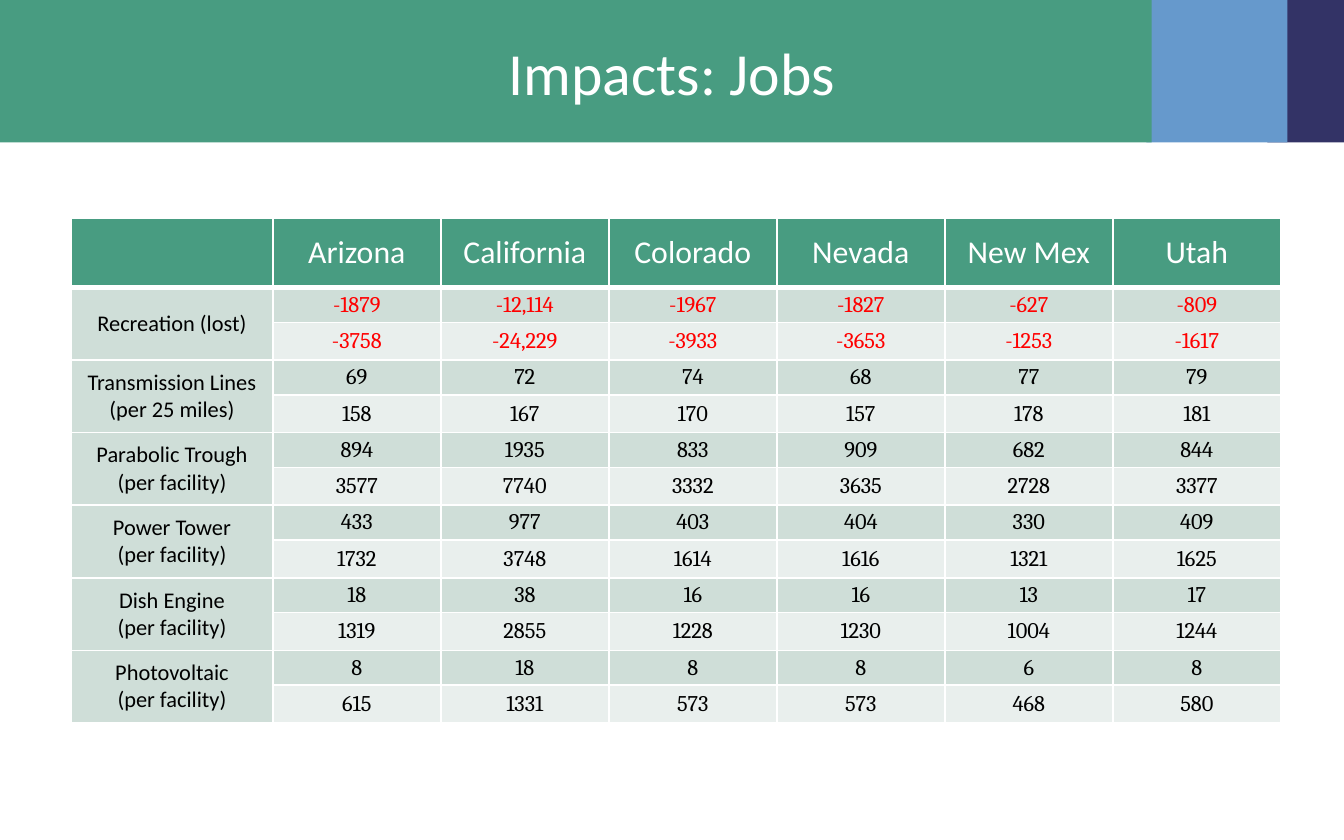
from dataclasses import dataclass

import lxml.etree
import pptx
import pptx.dml.color
import pptx.enum.shapes
import pptx.enum.text
import pptx.oxml.ns
import pptx.util
from pptx.util import Inches


@dataclass(frozen=True)
class Theme:
    green: str = "489C81"
    blue: str = "6699CC"
    navy: str = "333366"
    upper_fill: str = "CFDED8"
    lower_fill: str = "E9EFED"
    white: str = "FFFFFF"
    black: str = "000000"
    loss: str = "FF0000"
    sans: str = "Calibri"
    serif: str = "Cambria"
    title_size: float = 32
    head_size: float = 17
    body_size: float = 12
    rule: float = 1
    head_rule: float = 3


@dataclass(frozen=True)
class Band:
    left: float
    width: float
    color: str


@dataclass(frozen=True)
class Impact:
    """A labelled pair of table rows, one value for each state."""
    label: str
    upper: str
    lower: str


@dataclass(frozen=True)
class TextStyle:
    font: str
    size: float
    color: str


THEME = Theme()
BAND_HEIGHT = 1.06
BANDS = [
    Band(9.43, 0.57, THEME.navy),
    Band(8.53, 1.05, THEME.blue),
    Band(0, 8.57, THEME.green),
]
STATES = ["Arizona", "California", "Colorado", "Nevada", "New Mex", "Utah"]
IMPACTS = [
    Impact("Recreation (lost)", "-1879 -12,114 -1967 -1827 -627 -809",
           "-3758 -24,229 -3933 -3653 -1253 -1617"),
    Impact("Transmission Lines\n(per 25 miles)", "69 72 74 68 77 79",
           "158 167 170 157 178 181"),
    Impact("Parabolic Trough (per facility)", "894 1935 833 909 682 844",
           "3577 7740 3332 3635 2728 3377"),
    Impact("Power Tower\n(per facility)", "433 977 403 404 330 409",
           "1732 3748 1614 1616 1321 1625"),
    Impact("Dish Engine\n(per facility)", "18 38 16 16 13 17",
           "1319 2855 1228 1230 1004 1244"),
    Impact("Photovoltaic\n(per facility)", "8 18 8 8 6 8",
           "615 1331 573 573 468 580"),
]
LABEL_WIDTH, STATE_WIDTH = 1.5, 1.25
HEAD_HEIGHT, UPPER_HEIGHT, LOWER_HEIGHT = 0.52, 0.26, 0.27
ROOMY, TIGHT = (0.1, 0.04), (0.07, 0)


def rgb(color: str) -> pptx.dml.color.RGBColor:
    return pptx.dml.color.RGBColor.from_string(color)


def add_band(s, band: Band) -> None:
    sp = s.shapes.add_shape(
        pptx.enum.shapes.MSO_SHAPE.RECTANGLE,
        Inches(band.left), 0, Inches(band.width), Inches(BAND_HEIGHT))
    sp.shadow.inherit = False
    sp.fill.solid()
    sp.fill.fore_color.rgb = rgb(band.color)
    sp.line.fill.background()


def write(tf, text: str, style: TextStyle) -> None:
    """Write one centred paragraph, with line breaks at newlines."""
    p = tf.paragraphs[0]
    p.alignment = pptx.enum.text.PP_ALIGN.CENTER
    for i, line in enumerate(text.split("\n")):
        if i:
            p.add_line_break()
        r = p.add_run()
        r.text = line
        r.font.name = style.font
        r.font.size = pptx.util.Pt(style.size)
        r.font.color.rgb = rgb(style.color)


def add_title(s, text: str) -> None:
    sp = s.shapes.add_textbox(Inches(0.5), Inches(0.12), Inches(9), Inches(0.83))
    tf = sp.text_frame
    tf.word_wrap = True
    tf.vertical_anchor = pptx.enum.text.MSO_ANCHOR.MIDDLE
    write(tf, text, TextStyle(THEME.sans, THEME.title_size, THEME.white))


def add_borders(cell, bottom: float) -> None:
    qn = pptx.oxml.ns.qn
    tc_pr = cell._tc.get_or_add_tcPr()
    for side in "LRTB":
        width = bottom if side == "B" else THEME.rule
        ln = lxml.etree.SubElement(
            tc_pr, qn(f"a:ln{side}"), w=str(int(pptx.util.Pt(width))))
        fill = lxml.etree.SubElement(ln, qn("a:solidFill"))
        lxml.etree.SubElement(fill, qn("a:srgbClr"), val=THEME.white)


def format_cell(cell, fill: str, margins: tuple[float, float] = ROOMY,
                bottom: float = THEME.rule) -> None:
    add_borders(cell, bottom)
    cell.fill.solid()
    cell.fill.fore_color.rgb = rgb(fill)
    cell.vertical_anchor = pptx.enum.text.MSO_ANCHOR.MIDDLE
    cell.margin_left = cell.margin_right = Inches(margins[0])
    cell.margin_top = cell.margin_bottom = Inches(margins[1])


def add_header(table) -> None:
    style = TextStyle(THEME.sans, THEME.head_size, THEME.white)
    for col, name in enumerate(["", *STATES]):
        cell = table.cell(0, col)
        format_cell(cell, THEME.green, bottom=THEME.head_rule)
        if name:
            write(cell.text_frame, name, style)


def add_impact(table, row: int, impact: Impact) -> None:
    label = table.cell(row, 0)
    label.merge(table.cell(row + 1, 0))
    label_style = TextStyle(THEME.sans, THEME.body_size, THEME.black)
    write(label.text_frame, impact.label, label_style)
    lines = [(impact.upper, THEME.upper_fill, TIGHT),
             (impact.lower, THEME.lower_fill, ROOMY)]
    for r, (values, fill, margins) in enumerate(lines, start=row):
        format_cell(table.cell(r, 0), THEME.upper_fill)
        for col, value in enumerate(values.split(), start=1):
            color = THEME.loss if value.startswith("-") else THEME.black
            cell = table.cell(r, col)
            format_cell(cell, fill, margins)
            write(cell.text_frame, value,
                  TextStyle(THEME.serif, THEME.body_size, color))


def add_jobs_table(s) -> None:
    widths = [LABEL_WIDTH] + [STATE_WIDTH] * len(STATES)
    heights = [HEAD_HEIGHT] + [UPPER_HEIGHT, LOWER_HEIGHT] * len(IMPACTS)
    table = s.shapes.add_table(
        len(heights), len(widths), Inches(0.53), Inches(1.62),
        Inches(sum(widths)), Inches(sum(heights))).table
    for column, width in zip(table.columns, widths):
        column.width = Inches(width)
    for row, height in zip(table.rows, heights):
        row.height = Inches(height)
    add_header(table)
    for i, impact in enumerate(IMPACTS):
        add_impact(table, 1 + 2 * i, impact)


def main() -> None:
    prs = pptx.Presentation()
    prs.slide_width, prs.slide_height = Inches(10), Inches(6.25)
    s = prs.slides.add_slide(prs.slide_layouts[6])
    for band in BANDS:
        add_band(s, band)
    add_title(s, "Impacts: Jobs")
    add_jobs_table(s)
    prs.save("out.pptx")


if __name__ == "__main__":
    main()
